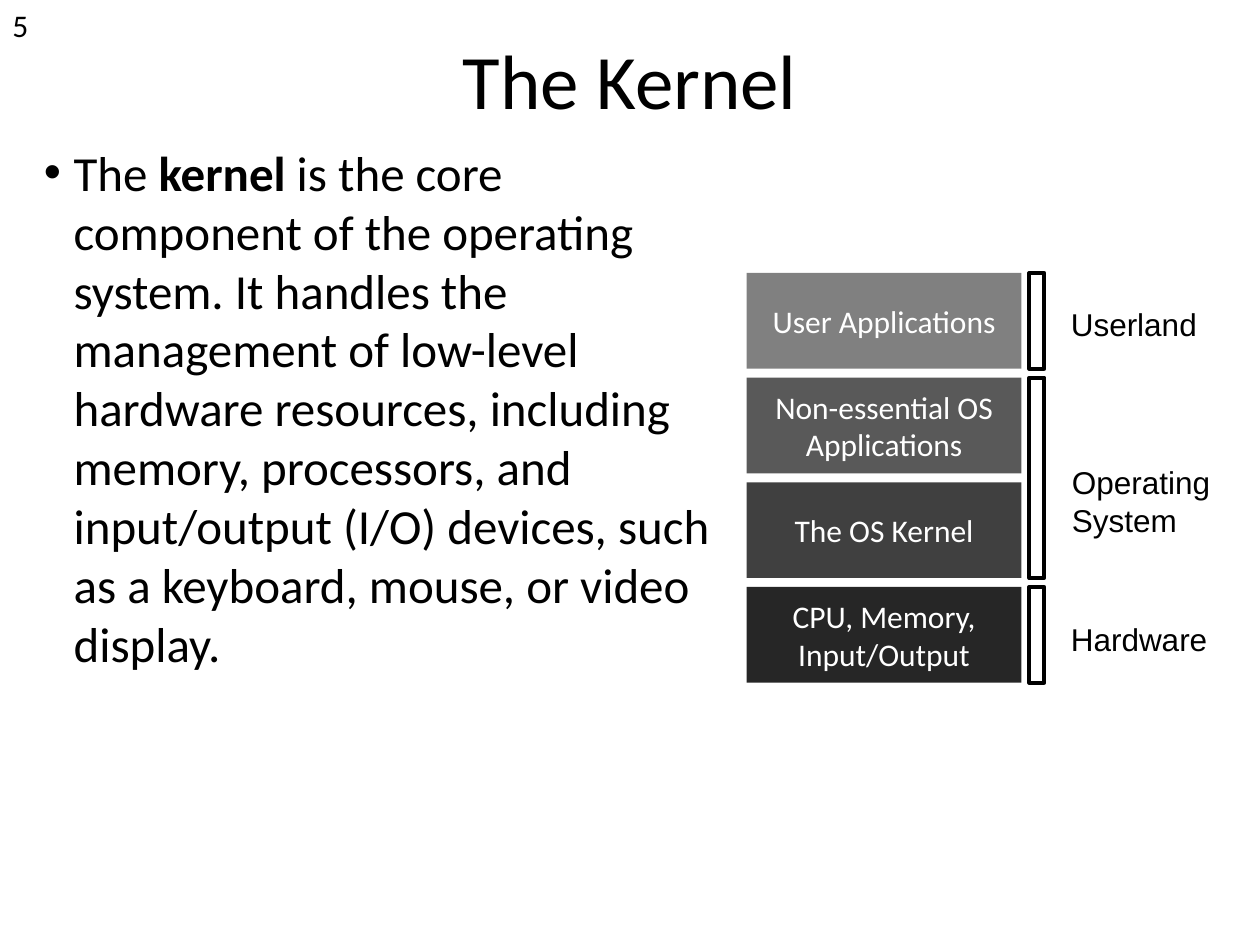
"""Build a slide on the kernel and the layers of a computer system."""
from pptx import Presentation
from pptx import util as u
from pptx.dml.color import RGBColor
from pptx.enum import shapes, text
from pptx.oxml import parse_xml
from pptx.oxml.ns import nsdecls

COLORS = {"ink": "000000", "paper": "FFFFFF", "apps": "808080",
          "tools": "595959", "kernel": "404040", "hardware": "262626"}
TITLE = "The Kernel"
PAGE = "5"
BODY = [
    ("The ", False),
    ("kernel ", True),
    ("is the core component of the operating system. It handles the management of "
     "low-level hardware resources, including memory, processors, and input/output "
     "(I/O) devices, such as a keyboard, mouse, or video display.", False),
]
LAYERS = [
    ("User Applications", "apps"),
    ("Non-essential OS Applications", "tools"),
    ("The OS Kernel", "kernel"),
    ("CPU, Memory, Input/Output", "hardware"),
]
GROUPS = [
    ("Userland", 0, 1, 604.8, 170.6, 90),
    ("Operating\nSystem", 1, 2, 605.5, 261.2, 103),
    ("Hardware", 3, 1, 604.8, 350.6, 96),
]
STACK_LEFT, STACK_TOP, LAYER_WIDTH, LAYER_HEIGHT, PITCH = 426.7, 156, 157, 54.7, 59.8
BAR_LEFT, BAR_WIDTH = 588.2, 8.6
LABEL_HEIGHT = 29


def color(name):
    return RGBColor.from_string(COLORS[name])


def place(shape, *box):
    shape.left, shape.top, shape.width, shape.height = map(u.Pt, box)


def style(text_frame, size, font="Calibri", ink="ink", align=text.PP_ALIGN.LEFT):
    for paragraph in text_frame.paragraphs:
        paragraph.alignment = align
        for run in paragraph.runs:
            run.font.size = u.Pt(size)
            run.font.name = font
            run.font.color.rgb = color(ink)


def add_text_box(slide, box, content="", wrap=True):
    shape = slide.shapes.add_textbox(*map(u.Pt, box))
    shape.text_frame.word_wrap = wrap
    shape.text_frame.text = content
    return shape.text_frame


def add_rectangle(slide, box):
    shape = slide.shapes.add_shape(shapes.MSO_SHAPE.RECTANGLE, *map(u.Pt, box))
    shape.shadow.inherit = False
    return shape


def add_title(slide):
    title = slide.shapes.title
    place(title, 36, 0, 648, 90)
    title.text_frame.text = TITLE
    title.text_frame.vertical_anchor = text.MSO_ANCHOR.MIDDLE
    style(title.text_frame, 44, align=text.PP_ALIGN.CENTER)


def add_body(slide):
    frame = add_text_box(slide, (18, 77.8, 408.2, 437.8))
    paragraph = frame.paragraphs[0]
    for words, bold in BODY:
        run = paragraph.add_run()
        run.text = words
        run.font.bold = bold
    style(frame, 28)
    properties = paragraph._p.get_or_add_pPr()
    properties.set("marL", str(u.Pt(17)))
    properties.set("indent", str(-u.Pt(17)))
    for tag in ('buFont %s typeface="Arial"', 'buChar %s char="•"'):
        properties.append(parse_xml(f"<a:{tag % nsdecls('a')}/>"))


def add_layers(slide):
    for index, (name, fill) in enumerate(LAYERS):
        top = STACK_TOP + index * PITCH
        shape = add_rectangle(slide, (STACK_LEFT, top, LAYER_WIDTH, LAYER_HEIGHT))
        shape.fill.solid()
        shape.fill.fore_color.rgb = color(fill)
        shape.line.fill.background()
        shape.text_frame.word_wrap = True
        shape.text_frame.vertical_anchor = text.MSO_ANCHOR.MIDDLE
        shape.text_frame.text = name
        style(shape.text_frame, 18, ink="paper", align=text.PP_ALIGN.CENTER)


def add_groups(slide):
    for name, first, count, left, label_top, width in GROUPS:
        top = STACK_TOP + first * PITCH
        height = LAYER_HEIGHT + (count - 1) * PITCH
        bar = add_rectangle(slide, (BAR_LEFT, top, BAR_WIDTH, height))
        bar.fill.background()
        bar.line.color.rgb = color("ink")
        bar.line.width = u.Pt(2.25)
        label = add_text_box(slide, (left, label_top, width, LABEL_HEIGHT), name, False)
        style(label, 18, "Arial")


def main():
    presentation = Presentation()
    presentation.slide_width, presentation.slide_height = u.Pt(720), u.Pt(540)
    slide = presentation.slides.add_slide(presentation.slide_layouts[5])
    add_title(slide)
    add_body(slide)
    style(add_text_box(slide, (0, 0, 36, 29), PAGE), 18)
    add_layers(slide)
    add_groups(slide)
    presentation.save("out.pptx")


if __name__ == "__main__":
    main()
